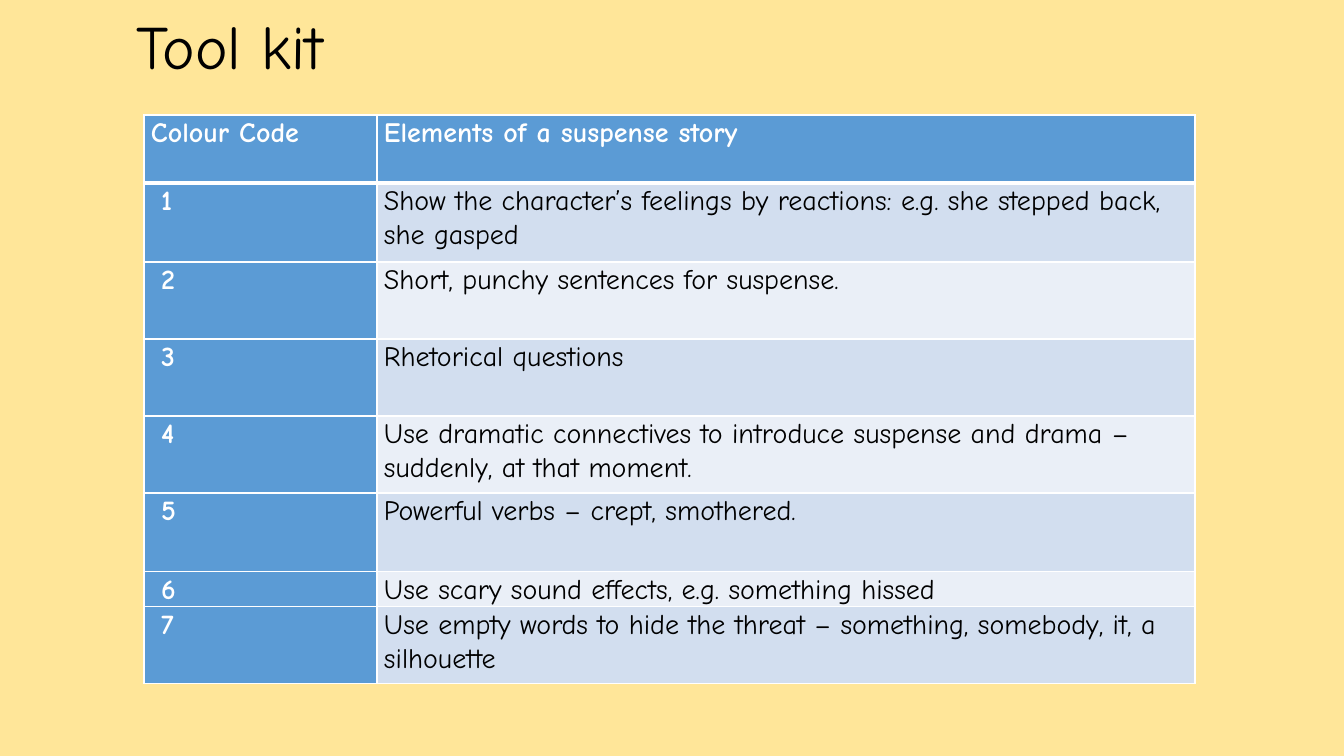
from lxml.etree import SubElement
from pptx import Presentation
from pptx.dml.color import RGBColor
from pptx.enum.text import MSO_ANCHOR, PP_ALIGN
from pptx.oxml.ns import qn
from pptx.util import Emu, Pt

TITLE = "Tool kit"
HEADS = ("Colour Code", "Elements of a suspense story")
# (element, row height in px)
ITEMS = [
    ("Show the character’s feelings by reactions: e.g. she stepped back, she gasped", 79),
    ("Short, punchy sentences for suspense.", 77),
    ("Rhetorical questions", 77),
    ("Use dramatic connectives to introduce suspense and drama – suddenly, at that moment.", 77),
    ("Powerful verbs – crept, smothered.", 79),
    ("Use scary sound effects, e.g. something hissed", 35),
    ("Use empty words to hide the threat – something, somebody, it, a silhouette", 77),
]
COLS = (233, 818)
HEAD_H = 68
FONT = "Comic Neue"
HUES = {"page": "FFE699", "head": "5B9BD5", "odd": "D2DEEF", "even": "EAEFF7",
        "ink": "000000", "line": "FFFFFF"}
SCALE = 12192000 / 1344


def px(n):
    return Emu(round(n * SCALE))


def rgb(key):
    return RGBColor.from_string(HUES[key])


def put(obj, vals):
    for key, val in vals.items():
        setattr(obj, key, val)


def write(frame, text, size, hue, bold, space):
    para = frame.paragraphs[0]
    put(para, {"alignment": PP_ALIGN.LEFT, "line_spacing": space})
    run = para.add_run()
    run.text = text
    put(run.font, {"name": FONT, "size": Pt(size), "bold": bold})
    run.font.color.rgb = rgb(hue)


def edge(cell, side, width):
    props = cell._tc.get_or_add_tcPr()
    line = SubElement(props, qn(f"a:ln{side}"), w=str(Pt(width)))
    fill = SubElement(line, qn("a:solidFill"))
    SubElement(fill, qn("a:srgbClr"), val=HUES["line"])


# Page
deck = Presentation()
put(deck, {"slide_width": px(1344), "slide_height": px(756)})
slide = deck.slides.add_slide(deck.slide_layouts[5])
slide.background.fill.solid()
slide.background.fill.fore_color.rgb = rgb("page")

# Title
title = slide.shapes.title
put(title, {"left": px(126), "top": px(0), "width": px(1041), "height": px(100)})
title.text_frame.vertical_anchor = MSO_ANCHOR.MIDDLE
write(title.text_frame, TITLE, 44, "ink", False, 0.9)

# Table
rows = [HEADS] + [(str(n), text) for n, (text, _) in enumerate(ITEMS, 1)]
highs = [HEAD_H] + [high for _, high in ITEMS]
table = slide.shapes.add_table(len(rows), len(COLS), px(144), px(115),
                               px(sum(COLS)), px(sum(highs))).table
for col, wide in zip(table.columns, COLS):
    col.width = px(wide)
for row, high in zip(table.rows, highs):
    row.height = px(high)

# Cells
for r, row in enumerate(rows):
    for c, text in enumerate(row):
        cell = table.cell(r, c)
        head = r == 0 or c == 0
        inset = 17 if r and c == 0 else 7
        put(cell, {"margin_left": px(inset), "margin_right": px(7),
                   "margin_top": 0, "margin_bottom": 0,
                   "vertical_anchor": MSO_ANCHOR.TOP})
        for side, thick in (("L", False), ("R", False), ("T", r == 1), ("B", r == 0)):
            edge(cell, side, 3 if thick else 1)
        cell.fill.solid()
        cell.fill.fore_color.rgb = rgb("head" if head else "odd" if r % 2 else "even")
        write(cell.text_frame, text, 20, "line" if head else "ink", head, 1.07)

deck.save("out.pptx")
